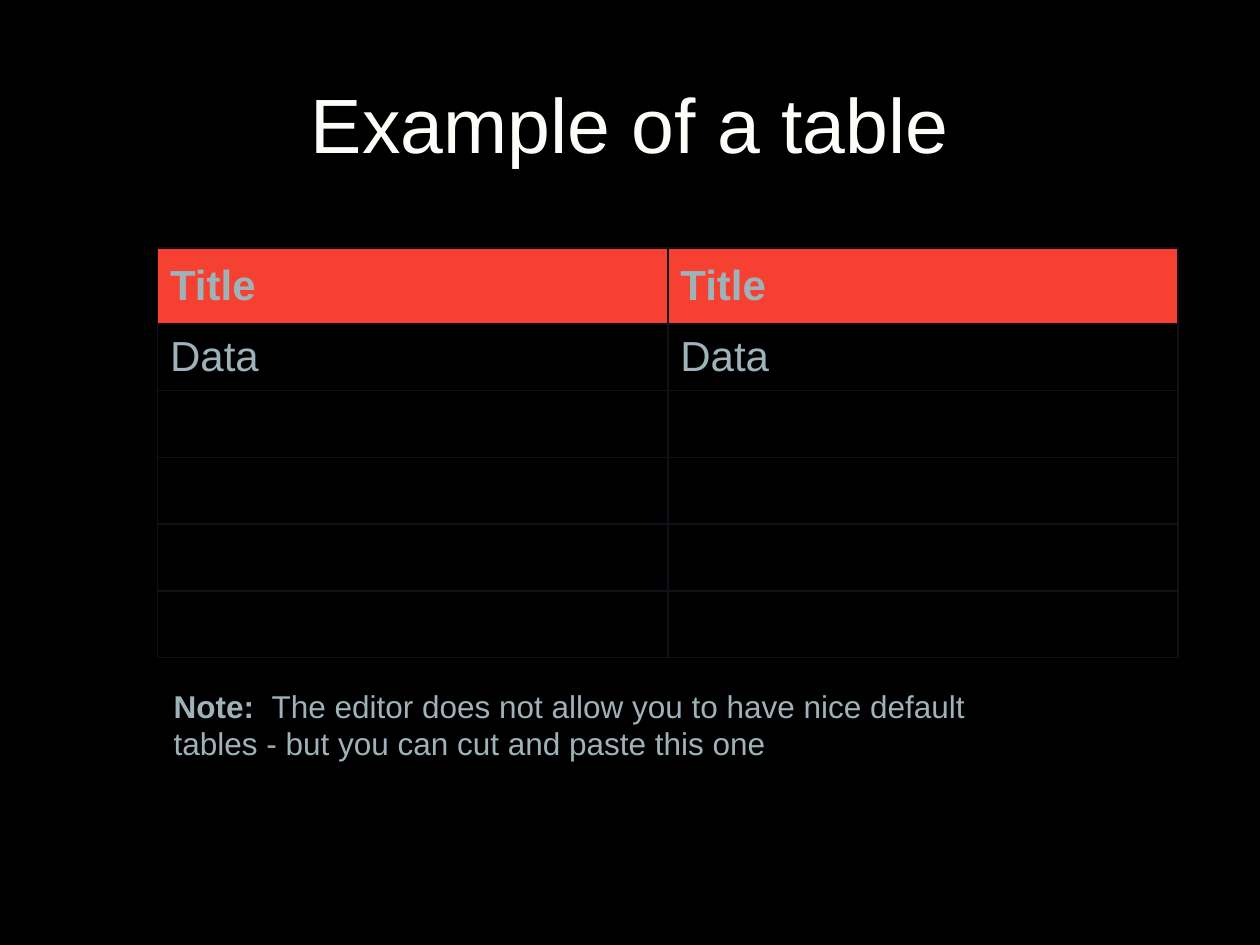
from lxml import etree
from pptx import Presentation
from pptx.dml.color import RGBColor
from pptx.enum.text import MSO_ANCHOR, PP_ALIGN
from pptx.oxml.ns import qn
from pptx.util import Inches, Pt

MIDDLE = MSO_ANCHOR.MIDDLE
CENTER = PP_ALIGN.CENTER

TITLE = "Example of a table"
ROWS = [("Title", "Title"), ("Data", "Data")] + [("", "")] * 4
NOTE = [
    ("Note:  ", True),
    ("The editor does not allow you to have nice default "
     "tables - but you can cut and paste this one", False),
]

FONT = "Arial"
BLACK, WHITE, GREY, RED, BORDER = "000000", "FDFCF8", "9EB2B9", "F64032", "0C1217"
COL_W, HEAD_H, ROW_H = 4.05, 0.6, 0.53


def rgb(value):
    return RGBColor.from_string(value)


def style(font, size, color, bold=False):
    font.name = FONT
    font.size = Pt(size)
    font.bold = bold
    font.color.rgb = rgb(color)


def add_borders(cell):
    tcPr = cell._tc.get_or_add_tcPr()
    for i, side in enumerate(("a:lnL", "a:lnR", "a:lnT", "a:lnB")):
        ln = etree.Element(qn(side), w=str(Pt(1)))
        fill = etree.SubElement(ln, qn("a:solidFill"))
        etree.SubElement(fill, qn("a:srgbClr"), val=BORDER)
        tcPr.insert(i, ln)


def add_title(s):
    title = s.shapes.title
    title.left, title.top = Inches(0.5), Inches(0.35)
    title.width, title.height = Inches(9), Inches(1.25)
    tf = title.text_frame
    tf.text = TITLE
    tf.vertical_anchor = MIDDLE
    p = tf.paragraphs[0]
    p.alignment = CENTER
    style(p.runs[0].font, 44, WHITE)


def add_data_table(s):
    n_cols = len(ROWS[0])
    height = HEAD_H + ROW_H * (len(ROWS) - 1)
    table = s.shapes.add_table(
        len(ROWS), n_cols, Inches(1.25), Inches(1.97),
        Inches(COL_W * n_cols), Inches(height)).table
    for col in table.columns:
        col.width = Inches(COL_W)
    for i, texts in enumerate(ROWS):
        head = i == 0
        table.rows[i].height = Inches(HEAD_H if head else ROW_H)
        for j, text in enumerate(texts):
            cell = table.cell(i, j)
            cell.vertical_anchor = MIDDLE
            if head:
                cell.fill.solid()
                cell.fill.fore_color.rgb = rgb(RED)
            else:
                cell.fill.background()
            add_borders(cell)
            if text:
                cell.text = text
                style(cell.text_frame.paragraphs[0].runs[0].font, 24, GREY, head)


def add_note(s):
    box = s.shapes.add_textbox(Inches(1.28), Inches(5.4), Inches(7.14), Inches(0.71))
    tf = box.text_frame
    tf.word_wrap = True
    for text, bold in NOTE:
        r = tf.paragraphs[0].add_run()
        r.text = text
        style(r.font, 18, GREY, bold)


def main():
    prs = Presentation()
    prs.slide_width, prs.slide_height = Inches(10), Inches(7.5)
    s = prs.slides.add_slide(prs.slide_layouts[5])
    s.background.fill.solid()
    s.background.fill.fore_color.rgb = rgb(BLACK)
    add_title(s)
    add_data_table(s)
    add_note(s)
    prs.save("out.pptx")


if __name__ == "__main__":
    main()
